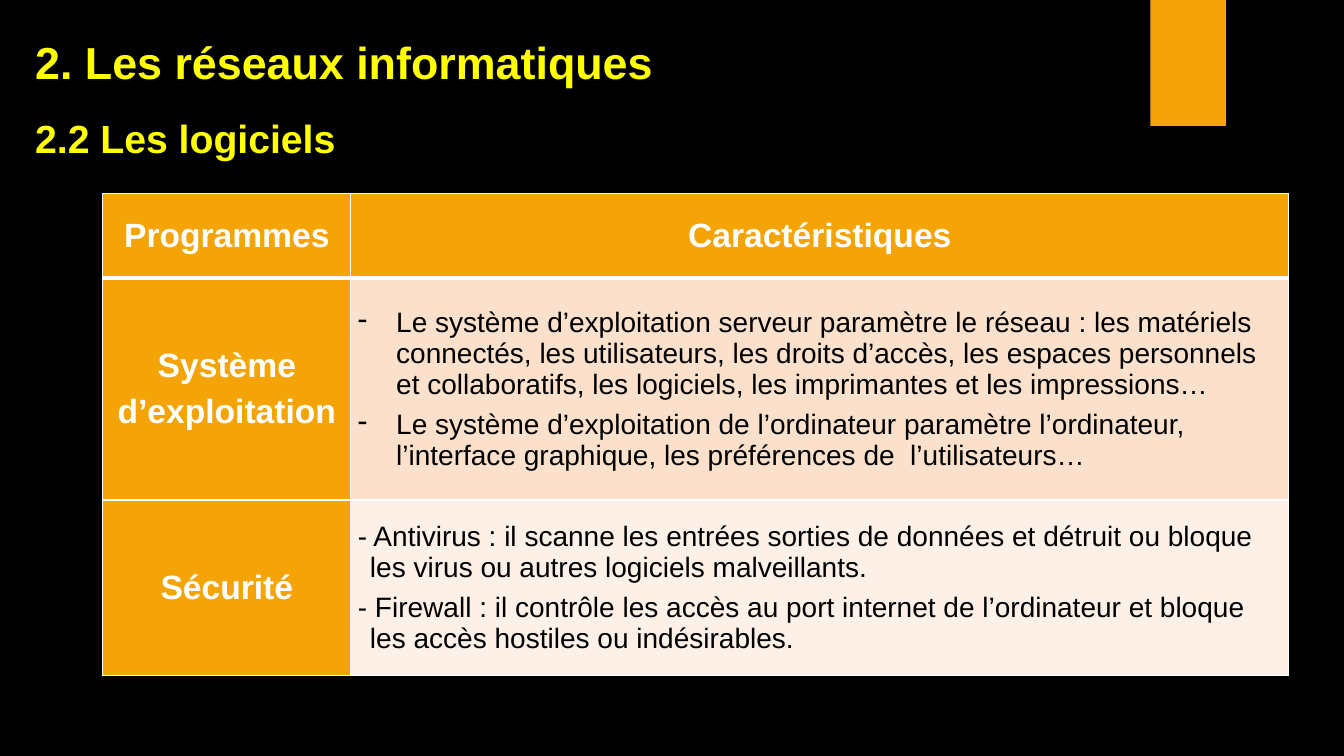
import pptx
import pptx.chart.data
import pptx.dml.color
import pptx.enum.shapes
import pptx.enum.text
import pptx.oxml
import pptx.oxml.ns
import pptx.util
from lxml import etree

Inches, Pt = pptx.util.Inches, pptx.util.Pt
ALIGN = pptx.enum.text.PP_ALIGN
ORANGE, WHITE, BLACK, YELLOW = "F5A408", "FFFFFF", "000000", "FFFF00"

HEADERS = ["Programmes", "Caractéristiques"]
SYSTEM = [
    "Le système d’exploitation serveur paramètre le réseau : les matériels connectés, "
    "les utilisateurs, les droits d’accès, les espaces personnels et collaboratifs, "
    "les logiciels, les imprimantes et les impressions…",
    "Le système d’exploitation de l’ordinateur paramètre l’ordinateur, "
    "l’interface graphique, les préférences de  l’utilisateurs…",
]
SECURITY = [
    "- Antivirus : il scanne les entrées sorties de données et détruit ou bloque "
    "les virus ou autres logiciels malveillants.",
    "- Firewall : il contrôle les accès au port internet de l’ordinateur et bloque "
    "les accès hostiles ou indésirables.",
]
# label lines, details, detail fill, hanging indent in inches, bullet
PROGRAMS = [
    (["Système", "d’exploitation"], SYSTEM, "FBE0CC", 0.38, "-"),
    (["Sécurité"], SECURITY, "FDF0E7", 0.12, None),
]


def color(value):
    return pptx.dml.color.RGBColor.from_string(value)


def fill_solid(target, value):
    target.fill.solid()
    target.fill.fore_color.rgb = color(value)


def write(frame, lines, size, ink, bold, align, gap=0):
    """Write one paragraph per line, with gap points between them."""
    frame.text = "\n".join(lines)
    for index, paragraph in enumerate(frame.paragraphs):
        paragraph.alignment = align
        paragraph.space_before = Pt(gap if index else 0)
        for run in paragraph.runs:
            run.font.name = "Arial"
            run.font.size = Pt(size)
            run.font.bold = bold
            run.font.color.rgb = color(ink)


def hang(paragraph, indent, bullet):
    properties = paragraph._p.get_or_add_pPr()
    properties.set("marL", str(Inches(indent)))
    properties.set("indent", str(-Inches(indent)))
    if bullet:
        mark = etree.SubElement(properties, pptx.oxml.ns.qn("a:buChar"))
        mark.set("char", bullet)


def add_borders(cell, bottom_width):
    properties = cell._tc.get_or_add_tcPr()
    widths = {"lnL": 1, "lnR": 1, "lnT": 1, "lnB": bottom_width}
    for position, (side, width) in enumerate(widths.items()):
        properties.insert(position, pptx.oxml.parse_xml(
            f'<a:{side} {pptx.oxml.ns.nsdecls("a")} w="{Pt(width)}">'
            f'<a:solidFill><a:srgbClr val="{WHITE}"/></a:solidFill></a:{side}>'))


def style_cell(cell, background, bottom_width=1):
    cell.vertical_anchor = pptx.enum.text.MSO_ANCHOR.MIDDLE
    cell.margin_left = cell.margin_right = Inches(0.07)
    cell.margin_top = cell.margin_bottom = 0
    fill_solid(cell, background)
    add_borders(cell, bottom_width)


def add_ribbon(slide, left, top, width, height):
    ribbon = slide.shapes.add_shape(
        pptx.enum.shapes.MSO_SHAPE.RECTANGLE,
        Inches(left), Inches(top), Inches(width), Inches(height))
    ribbon.shadow.inherit = False
    fill_solid(ribbon, ORANGE)
    ribbon.line.fill.background()


def add_headings(slide, left, top, width, height):
    headings = slide.shapes.add_textbox(
        Inches(left), Inches(top), Inches(width), Inches(height)).text_frame
    headings.word_wrap = True
    write(headings, ["2. Les réseaux informatiques", "2.2 Les logiciels"],
          32, YELLOW, True, ALIGN.JUSTIFY, 18)
    headings.paragraphs[1].runs[0].font.size = Pt(28)


def add_programs(slide, left, top, widths, heights):
    table = slide.shapes.add_table(
        len(heights), len(widths), Inches(left), Inches(top),
        Inches(sum(widths)), Inches(sum(heights))).table
    for column, width in zip(table.columns, widths):
        column.width = Inches(width)
    for row, height in zip(table.rows, heights):
        row.height = Inches(height)

    for index, header in enumerate(HEADERS):
        cell = table.cell(0, index)
        style_cell(cell, ORANGE, 3)
        write(cell.text_frame, [header], 24, WHITE, True, ALIGN.CENTER)

    for index, (label, details, tint, indent, bullet) in enumerate(PROGRAMS, 1):
        label_cell, detail_cell = table.cell(index, 0), table.cell(index, 1)
        style_cell(label_cell, ORANGE)
        write(label_cell.text_frame, label, 24, WHITE, True, ALIGN.CENTER, 6)
        style_cell(detail_cell, tint)
        write(detail_cell.text_frame, details, 20, BLACK, False, ALIGN.LEFT, 6)
        for paragraph in detail_cell.text_frame.paragraphs:
            hang(paragraph, indent, bullet)


def main():
    deck = pptx.Presentation()
    deck.slide_width, deck.slide_height = Inches(13.33), Inches(7.5)
    slide = deck.slides.add_slide(deck.slide_layouts[6])
    fill_solid(slide.background, BLACK)
    add_ribbon(slide, 11.41, 0, 0.75, 1.25)
    add_headings(slide, 0.25, 0.3, 9.35, 1.3)
    add_programs(slide, 1.02, 1.92, [2.46, 9.3], [0.84, 2.2, 1.74])
    deck.save("out.pptx")


if __name__ == "__main__":
    main()
